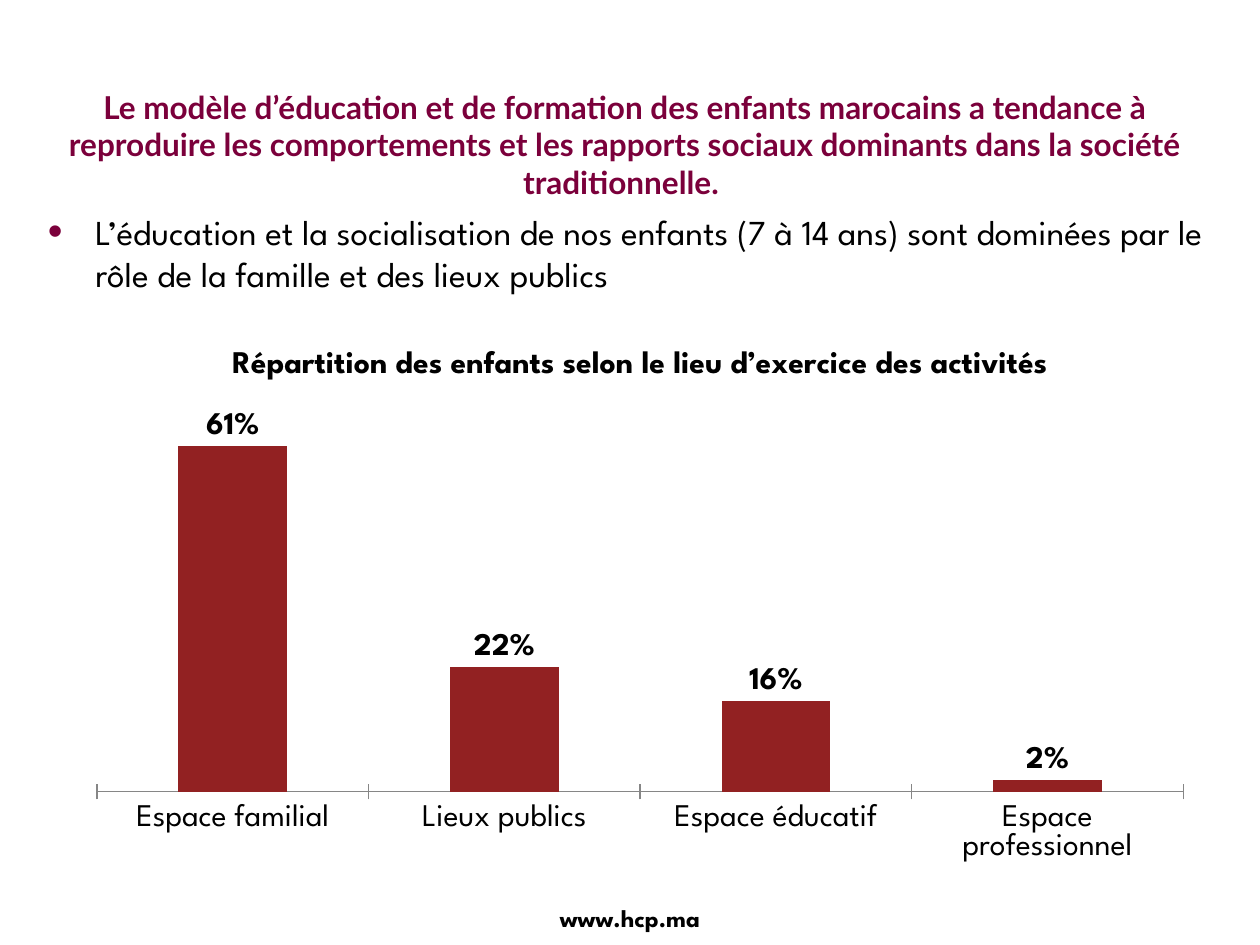
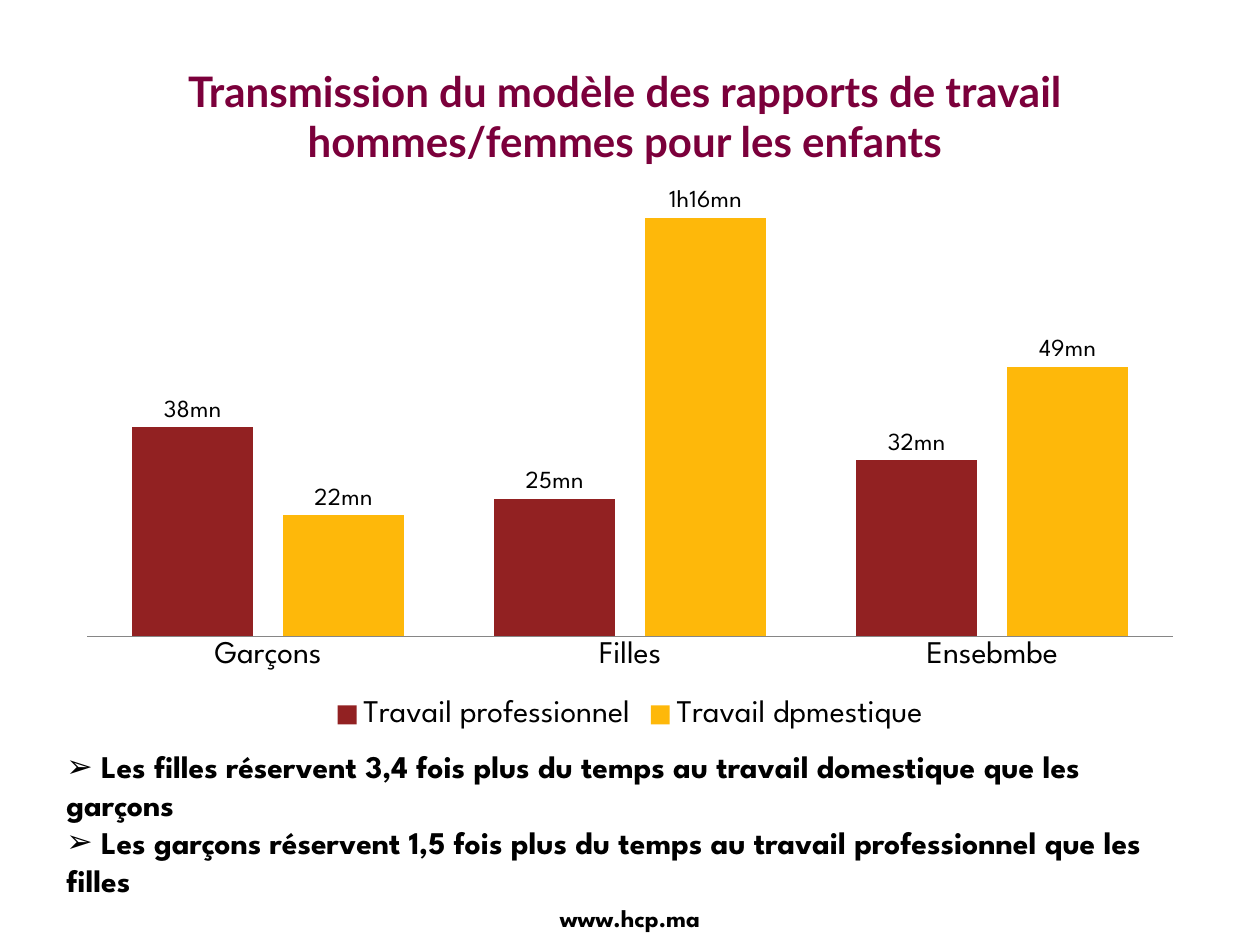
from lxml import etree
from pptx import Presentation
from pptx.chart.data import CategoryChartData
from pptx.dml.color import RGBColor
from pptx.enum import chart as ch, text as tx
from pptx.oxml import ns
from pptx.util import Cm, Pt

# Shared style
PLUM = RGBColor(0x7B, 0x00, 0x3B)
BLACK = RGBColor(0, 0, 0)
BRICK = RGBColor(0x92, 0x21, 0x22)
AMBER = RGBColor(0xFE, 0xB8, 0x0A)
AXIS_GREY = RGBColor(0x86, 0x86, 0x86)
TITLE_FONT, BODY_FONT = "Lato", "League Spartan"


def style_font(font, size, color=BLACK, name=BODY_FONT, bold=False):
    font.size, font.name, font.bold = Pt(size), name, bold
    font.color.rgb = color


def add_bullet(paragraph, char, color=None, percent=None, hang=0):
    pPr = paragraph._p.get_or_add_pPr()
    pPr.set("marL", str(Cm(hang)))
    pPr.set("indent", str(-Cm(hang)))
    if color is not None:
        holder = etree.SubElement(pPr, ns.qn("a:buClr"))
        etree.SubElement(holder, ns.qn("a:srgbClr")).set("val", str(color))
    if percent:
        etree.SubElement(pPr, ns.qn("a:buSzPct")).set("val", str(percent * 1000))
    etree.SubElement(pPr, ns.qn("a:buFont")).set("typeface", "Arial")
    etree.SubElement(pPr, ns.qn("a:buChar")).set("char", char)


def place(shape, box):
    shape.left, shape.top, shape.width, shape.height = (Cm(v) for v in box)


def fill_title(slide, box, wording, size):
    title = slide.shapes.title
    place(title, box)
    frame = title.text_frame
    frame.text = wording
    frame.auto_size = tx.MSO_AUTO_SIZE.NONE
    frame.vertical_anchor = tx.MSO_ANCHOR.MIDDLE
    paragraph = frame.paragraphs[0]
    paragraph.alignment = tx.PP_ALIGN.CENTER
    style_font(paragraph.runs[0].font, size, PLUM, TITLE_FONT, True)


def add_footer(slide, box=(9.7, 18.08, 6, 0.84)):
    footer = slide.shapes.add_textbox(*(Cm(v) for v in box))
    frame = footer.text_frame
    frame.word_wrap = True
    frame.vertical_anchor = tx.MSO_ANCHOR.BOTTOM
    frame.text = "www.hcp.ma"
    frame.paragraphs[0].alignment = tx.PP_ALIGN.CENTER
    style_font(frame.paragraphs[0].runs[0].font, 14, bold=True)


def fill_statement(slide, box, wording):
    body = slide.placeholders[1]
    place(body, box)
    frame = body.text_frame
    frame.text = wording
    frame.auto_size = tx.MSO_AUTO_SIZE.NONE
    paragraph = frame.paragraphs[0]
    paragraph.space_before = Pt(0)
    add_bullet(paragraph, "•", PLUM, 120, hang=0.96)
    style_font(paragraph.runs[0].font, 20)


def add_findings(slide, box, findings):
    frame = slide.shapes.add_textbox(*(Cm(v) for v in box)).text_frame
    frame.word_wrap = True
    frame.text = "\n".join(" " + finding for finding in findings)
    for paragraph in frame.paragraphs:
        add_bullet(paragraph, "➢")
        style_font(paragraph.runs[0].font, 18, bold=True)


def set_plot_area(chart, **fractions):
    """Fix the inner plot area as fractions of the chart box."""
    area = chart._chartSpace.find(".//" + ns.qn("c:plotArea"))
    for layout in area.findall(ns.qn("c:layout")):
        area.remove(layout)
    layout = etree.Element(ns.qn("c:layout"))
    area.insert(0, layout)
    manual = etree.SubElement(layout, ns.qn("c:manualLayout"))
    settings = {"layoutTarget": "inner", "xMode": "edge", "yMode": "edge", **fractions}
    for tag, value in settings.items():
        etree.SubElement(manual, ns.qn("c:" + tag)).set("val", str(value))


def add_columns(slide, box, categories, series, top_value, gap, overlap, tick):
    """Column chart; series holds (name, values, colour)."""
    data = CategoryChartData()
    data.categories = categories
    for name, values, _ in series:
        data.add_series(name, values)
    chart = slide.shapes.add_chart(
        ch.XL_CHART_TYPE.COLUMN_CLUSTERED, *(Cm(v) for v in box), data).chart
    style_font(chart.font, 18)
    chart.has_title = chart.has_legend = False

    values_axis, category_axis = chart.value_axis, chart.category_axis
    values_axis.minimum_scale, values_axis.maximum_scale = 0, top_value
    values_axis.has_major_gridlines = False
    values_axis.visible = False
    category_axis.major_tick_mark = tick
    category_axis.format.line.color.rgb = AXIS_GREY

    plot = chart.plots[0]
    plot.gap_width, plot.overlap = gap, overlap
    plot.vary_by_categories = False
    for columns, (_, _, color) in zip(plot.series, series):
        columns.format.fill.solid()
        columns.format.fill.fore_color.rgb = color
        labels = columns.data_labels
        labels.show_value = True
        labels.position = ch.XL_LABEL_POSITION.OUTSIDE_END
    return chart


def as_duration(minutes):
    hours, rest = divmod(minutes, 60)
    return f"{hours}h{rest}mn" if hours else f"{rest}mn"


def build_places_slide(prs):
    slide = prs.slides.add_slide(prs.slide_layouts[1])
    add_footer(slide)
    fill_title(slide, (1.09, 1.32, 23.01, 3.18),
               "Le modèle d’éducation et de formation des enfants marocains a tendance à "
               "reproduire les comportements et les rapports sociaux dominants dans la "
               "société traditionnelle. ", 18)
    fill_statement(slide, (0.71, 4.11, 24, 1.8),
                   "L’éducation et la socialisation de nos enfants (7 à 14 ans) sont "
                   "dominées par le rôle de la famille et des lieux publics")
    # Share of children by place
    chart = add_columns(
        slide, (1.5, 6.53, 22.81, 11.1),
        ["Espace familial", "Lieux publics", "Espace éducatif", "Espace professionnel"],
        [("Series 1", (0.61, 0.22, 0.16, 0.02), BRICK)],
        top_value=0.7, gap=150, overlap=0, tick=ch.XL_TICK_MARK.CROSS)
    set_plot_area(chart, x=0.02, y=0.13, w=0.96, h=0.72)
    heading = chart.chart_title
    heading.include_in_layout = False
    heading.text_frame.text = "Répartition des enfants selon le lieu d’exercice des activités"
    style_font(heading.text_frame.paragraphs[0].runs[0].font, 18, bold=True)
    labels = chart.plots[0].series[0].data_labels
    labels.number_format, labels.number_format_is_linked = "0%", False
    style_font(labels.font, 18, bold=True)


def build_work_slide(prs):
    slide = prs.slides.add_slide(prs.slide_layouts[5])
    add_footer(slide)
    fill_title(slide, (1.09, 0.74, 23.01, 3.18),
               "Transmission du modèle des rapports de travail hommes/femmes "
               "pour les enfants", 24)
    # Time spent on each kind of work
    chart = add_columns(
        slide, (1.3, 3.73, 22.81, 11.1), ["Garçons", "Filles", "Ensebmbe"],
        [("Travail professionnel", (38, 25, 32), BRICK),
         ("Travail dpmestique", (22, 76, 49), AMBER)],
        top_value=80, gap=75, overlap=-25, tick=ch.XL_TICK_MARK.NONE)
    set_plot_area(chart, x=0.02, y=0.02, w=0.96, h=0.8)
    chart.has_legend = True
    chart.legend.position = ch.XL_LEGEND_POSITION.BOTTOM
    chart.legend.include_in_layout = False
    style_font(chart.legend.font, 18)
    for columns in chart.plots[0].series:
        style_font(columns.data_labels.font, 14)
        for index, minutes in enumerate(columns.values):
            label = columns.points[index].data_label
            label.text_frame.text = as_duration(int(minutes))
            style_font(label.text_frame.paragraphs[0].runs[0].font, 14)
            label.position = ch.XL_LABEL_POSITION.OUTSIDE_END
    add_findings(slide, (1.09, 14.94, 22.2, 3.1), [
        "Les filles réservent 3,4 fois plus du temps au travail domestique que les garçons",
        "Les garçons réservent 1,5 fois plus du temps au travail professionnel que les filles",
    ])


def main():
    prs = Presentation()
    prs.slide_width, prs.slide_height = Cm(25.4), Cm(19.05)
    build_places_slide(prs)
    build_work_slide(prs)
    prs.save("out.pptx")


if __name__ == "__main__":
    main()
